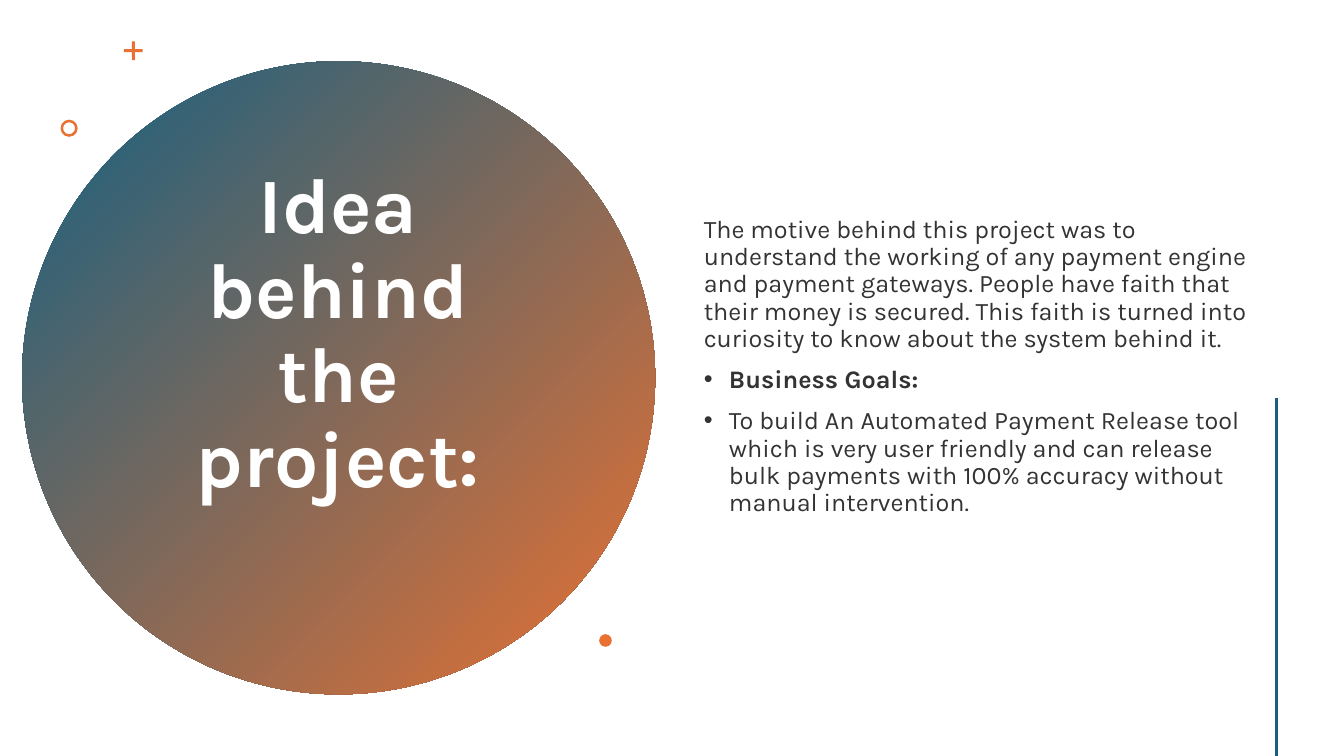
from dataclasses import dataclass

from lxml.etree import SubElement
from pptx import Presentation
from pptx.dml.color import RGBColor
from pptx.enum.shapes import MSO_CONNECTOR, MSO_SHAPE
from pptx.enum.text import MSO_ANCHOR, MSO_AUTO_SIZE, PP_ALIGN
from pptx.oxml.ns import qn
from pptx.util import Pt


@dataclass(frozen=True)
class Theme:
    font: str = "Karla"
    blue: RGBColor = RGBColor(0x15, 0x60, 0x82)
    orange: RGBColor = RGBColor(0xE9, 0x71, 0x32)
    title: RGBColor = RGBColor(0xFF, 0xFF, 0xFF)
    body: RGBColor = RGBColor(0x33, 0x33, 0x33)
    title_size: int = 56
    body_size: int = 18


THEME = Theme()
TITLE = "Idea behind the project:"
BODY = [
    ("The motive behind this project was to understand the working of any "
     "payment engine and payment gateways. People have faith that their money "
     "is secured. This faith is turned into curiosity to know about the system "
     "behind it.", False, False),
    ("Business Goals:", True, True),
    ("To build An Automated Payment Release tool which is very user friendly "
     "and can release bulk payments with 100% accuracy without manual "
     "intervention.", True, False),
]


def add_figure(slide, kind, left, top, size, adjustment=None):
    shape = slide.shapes.add_shape(kind, Pt(left), Pt(top), Pt(size), Pt(size))
    shape.shadow.inherit = False
    shape.line.fill.background()
    shape.fill.solid()
    shape.fill.fore_color.rgb = THEME.orange
    if adjustment is not None:
        shape.adjustments[0] = adjustment
    return shape


def add_gradient_circle(slide, left, top, size):
    circle = add_figure(slide, MSO_SHAPE.OVAL, left, top, size)
    circle.fill.gradient()
    circle.fill.gradient_angle = 315
    for stop, color in zip(circle.fill.gradient_stops, (THEME.blue, THEME.orange)):
        stop.color.rgb = color
    return circle


def place_text(placeholder, left, top, width, height, bottom_margin):
    placeholder.left, placeholder.top = Pt(left), Pt(top)
    placeholder.width, placeholder.height = Pt(width), Pt(height)
    frame = placeholder.text_frame
    frame.word_wrap = True
    frame.auto_size = MSO_AUTO_SIZE.NONE
    frame.vertical_anchor = MSO_ANCHOR.MIDDLE
    frame.margin_bottom = Pt(bottom_margin)
    return frame


def format_paragraph(paragraph, size, color, bold):
    paragraph.line_spacing = 0.9
    paragraph.font.name = THEME.font
    paragraph.font.size = Pt(size)
    paragraph.font.color.rgb = color
    paragraph.font.bold = bold


def set_bullet(paragraph, bulleted):
    properties = paragraph._p.get_or_add_pPr()
    indent = Pt(18) if bulleted else 0
    properties.set("marL", str(indent))
    properties.set("indent", str(-indent))
    if bulleted:
        SubElement(properties, qn("a:buFont"), typeface="Arial")
        SubElement(properties, qn("a:buChar"), char="•")
    else:
        SubElement(properties, qn("a:buNone"))


def fill_title(title):
    frame = place_text(title, 98, 101.5, 287, 336, 64)
    frame.text = TITLE
    paragraph = frame.paragraphs[0]
    paragraph.alignment = PP_ALIGN.CENTER
    format_paragraph(paragraph, THEME.title_size, THEME.title, True)


def fill_body(body):
    frame = place_text(body, 495.5, 36, 403, 476.5, 28)
    for index, (text, bulleted, bold) in enumerate(BODY):
        paragraph = frame.paragraphs[0] if index == 0 else frame.add_paragraph()
        paragraph.text = text
        set_bullet(paragraph, bulleted)
        paragraph.alignment = PP_ALIGN.LEFT
        paragraph.space_before = Pt(10 if index else 0)
        format_paragraph(paragraph, THEME.body_size, THEME.body, bold)


def add_accent_line(slide, x, top, bottom):
    line = slide.shapes.add_connector(
        MSO_CONNECTOR.STRAIGHT, Pt(x), Pt(top), Pt(x), Pt(bottom))
    line.line.color.rgb = THEME.blue
    line.line.width = Pt(2)
    SubElement(line.element.spPr, qn("a:effectLst"))


def main():
    presentation = Presentation()
    presentation.slide_width, presentation.slide_height = Pt(960), Pt(540)
    slide = presentation.slides.add_slide(presentation.slide_layouts[1])
    title, body = slide.placeholders
    circle = add_gradient_circle(slide, 15.75, 43.75, 452.25)
    title.element.addprevious(circle.element)
    fill_title(title)
    fill_body(body)
    add_figure(slide, MSO_SHAPE.CROSS, 88.5, 29.5, 13.5, 0.42)
    add_figure(slide, MSO_SHAPE.DONUT, 43.25, 85.5, 12.25, 0.15)
    add_figure(slide, MSO_SHAPE.OVAL, 428, 453, 9)
    add_accent_line(slide, 912, 284, 540)
    presentation.save("out.pptx")


if __name__ == "__main__":
    main()
